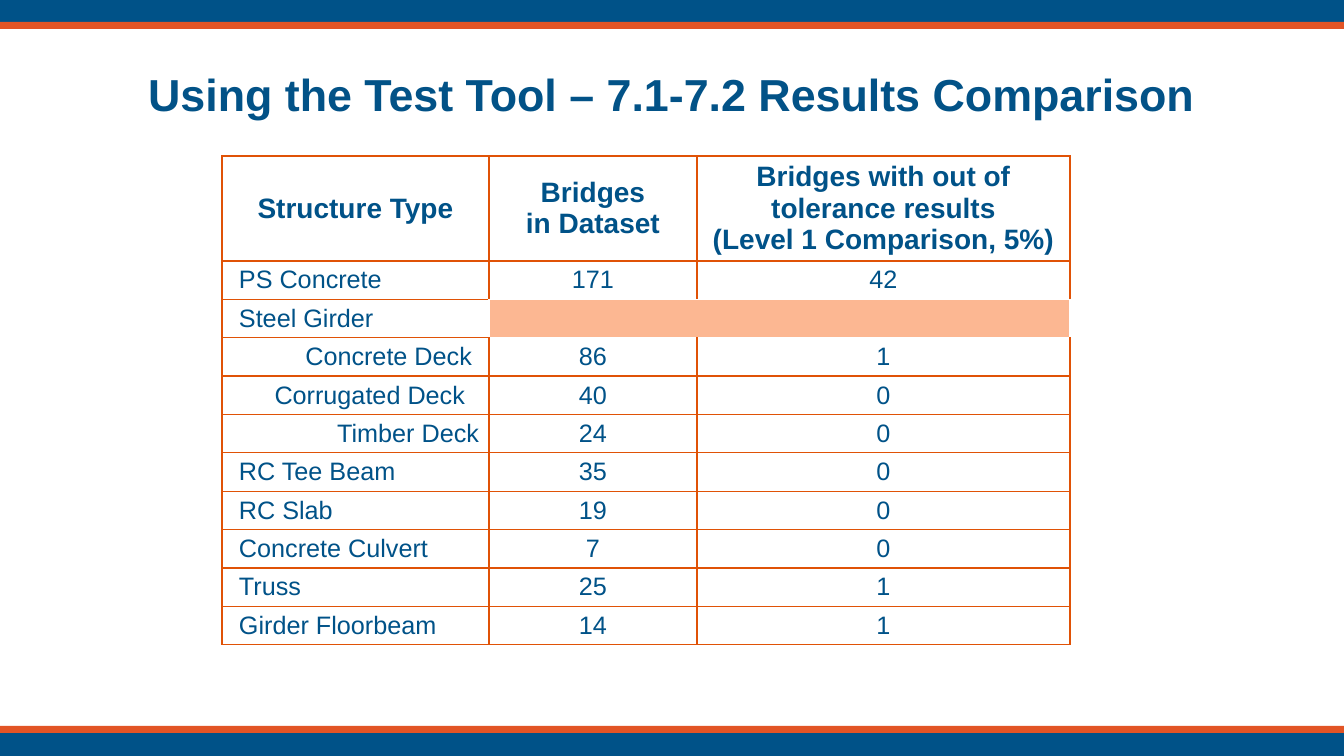
from dataclasses import dataclass

from lxml.etree import SubElement
from pptx import Presentation
from pptx.dml.color import RGBColor
from pptx.enum.shapes import MSO_SHAPE
from pptx.enum.text import MSO_ANCHOR, MSO_AUTO_SIZE, PP_ALIGN
from pptx.oxml.ns import qn
from pptx.util import Pt

EMU_PER_PX = 12192000 / 1344
SLIDE_WIDTH, SLIDE_HEIGHT = 1344, 756


@dataclass(frozen=True)
class Theme:
    font: str = "Arial"
    navy: str = "005288"
    title_navy: str = "025287"
    band_orange: str = "E25425"
    grid_orange: str = "E05206"
    shade: str = "FCB792"
    white: str = "FFFFFF"
    title_size: int = 32
    header_size: int = 20
    body_size: int = 18
    grid_width: int = 1


THEME = Theme()

COLUMN_WIDTHS = (267, 208, 373)
HEADER_HEIGHT = 105
BODY_HEIGHT = 384
CELL_MARGIN = 10
TYPE_INDENT = 17

HEADERS = (
    ("Structure Type",),
    ("Bridges\nin Dataset",),
    ("Bridges with out of tolerance results", "(Level 1 Comparison, 5%)"),
)
STRUCTURES = (
    ("PS Concrete", 171, 42),
    ("Steel Girder", None, None),
    ("Concrete Deck", 86, 1),
    ("Corrugated Deck", 40, 0),
    ("Timber Deck", 24, 0),
    ("RC Tee Beam", 35, 0),
    ("RC Slab", 19, 0),
    ("Concrete Culvert", 7, 0),
    ("Truss", 25, 1),
    ("Girder Floorbeam", 14, 1),
)
DECK_INDENTS = {"Concrete Deck": 17, "Corrugated Deck": 24, "Timber Deck": 10}
SHADED = {
    (row, column)
    for row, structure in enumerate(STRUCTURES, 1)
    for column, value in enumerate(structure)
    if value is None
}
SIDES = {"lnL": (0, -1), "lnR": (0, 1), "lnT": (-1, 0), "lnB": (1, 0)}


def px(length):
    return round(length * EMU_PER_PX)


def write_text(frame, *paragraphs, size, color=THEME.navy, bold=False, align=PP_ALIGN.CENTER):
    for index, wording in enumerate(paragraphs):
        paragraph = frame.add_paragraph() if index else frame.paragraphs[0]
        paragraph.text = wording
        paragraph.alignment = align
        for run in paragraph.runs:
            run.font.name = THEME.font
            run.font.size = Pt(size)
            run.font.bold = bold
            run.font.color.rgb = RGBColor.from_string(color)


def add_band(slide, top, height, color):
    band = slide.shapes.add_shape(MSO_SHAPE.RECTANGLE, 0, px(top), px(SLIDE_WIDTH), px(height))
    band.shadow.inherit = False
    band.fill.solid()
    band.fill.fore_color.rgb = RGBColor.from_string(color)
    band.line.fill.background()


def place_title(slide, wording):
    title = slide.shapes.title
    title.left, title.top, title.width, title.height = map(px, (67, 31, 1210, 126))
    title.text_frame.auto_size = MSO_AUTO_SIZE.NONE
    title.text_frame.vertical_anchor = MSO_ANCHOR.MIDDLE
    write_text(title.text_frame, wording, size=THEME.title_size, color=THEME.title_navy, bold=True)


def draw_borders(cell, row, column):
    properties = cell._tc.get_or_add_tcPr()
    for side, (down, across) in SIDES.items():
        shaded_sides = ((row, column) in SHADED) + ((row + down, column + across) in SHADED)
        edge = SubElement(properties, qn(f"a:{side}"), w=str(Pt(THEME.grid_width)))
        if shaded_sides == 2:
            SubElement(edge, qn("a:noFill"))
        else:
            fill = SubElement(edge, qn("a:solidFill"))
            color = THEME.white if shaded_sides else THEME.grid_orange
            SubElement(fill, qn("a:srgbClr"), val=color)


def format_cell(cell, row, column):
    draw_borders(cell, row, column)
    cell.fill.solid()
    shade = THEME.shade if (row, column) in SHADED else THEME.white
    cell.fill.fore_color.rgb = RGBColor.from_string(shade)
    cell.vertical_anchor = MSO_ANCHOR.MIDDLE
    cell.margin_left = cell.margin_right = px(CELL_MARGIN)
    cell.margin_top = cell.margin_bottom = px(3)


def write_structure_type(cell, name):
    align = PP_ALIGN.LEFT
    if name in DECK_INDENTS:
        align = PP_ALIGN.RIGHT
        cell.margin_right = px(DECK_INDENTS[name])
    else:
        cell.margin_left = px(TYPE_INDENT)
    write_text(cell.text_frame, name, size=THEME.body_size, align=align)


def add_results_table(slide):
    results = slide.shapes.add_table(
        len(STRUCTURES) + 1, len(HEADERS), px(222), px(156),
        px(sum(COLUMN_WIDTHS)), px(HEADER_HEIGHT + BODY_HEIGHT),
    ).table
    results.first_row = results.horz_banding = False
    for column, width in zip(results.columns, COLUMN_WIDTHS):
        column.width = px(width)
    for index, row in enumerate(results.rows):
        row.height = px(BODY_HEIGHT / len(STRUCTURES)) if index else px(HEADER_HEIGHT)
        for column, cell in enumerate(row.cells):
            format_cell(cell, index, column)

    for column, heading in enumerate(HEADERS):
        write_text(results.cell(0, column).text_frame, *heading, size=THEME.header_size, bold=True)
    for row, (name, *counts) in enumerate(STRUCTURES, 1):
        write_structure_type(results.cell(row, 0), name)
        for column, count in enumerate(counts, 1):
            if count is not None:
                write_text(results.cell(row, column).text_frame, str(count), size=THEME.body_size)


def main():
    presentation = Presentation()
    presentation.slide_width = px(SLIDE_WIDTH)
    presentation.slide_height = px(SLIDE_HEIGHT)
    slide = presentation.slides.add_slide(presentation.slide_layouts[5])
    for top, height, color in (
        (733, 23, THEME.navy),
        (726, 7, THEME.band_orange),
        (0, 23, THEME.navy),
        (22, 7, THEME.band_orange),
    ):
        add_band(slide, top, height, color)
    place_title(slide, "Using the Test Tool – 7.1-7.2 Results Comparison")
    add_results_table(slide)
    presentation.save("out.pptx")


if __name__ == "__main__":
    main()
